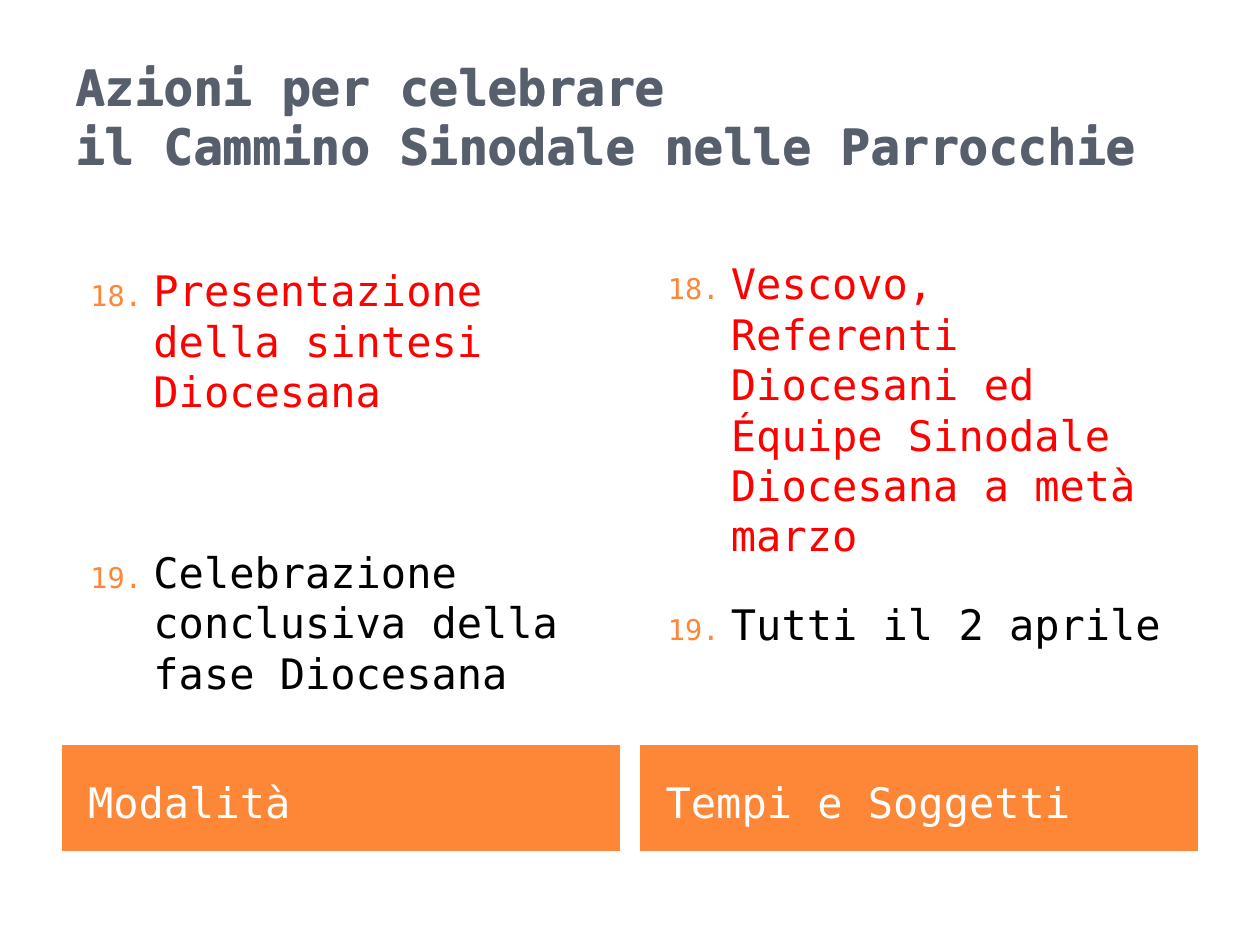
"""Build the slide on celebrating the synodal path in the parishes."""
from lxml import etree
from pptx import Presentation
from pptx.dml.color import RGBColor
from pptx.enum.shapes import MSO_SHAPE
from pptx.enum.text import MSO_ANCHOR, PP_ALIGN
from pptx.oxml.ns import qn
from pptx.util import Pt

RECTANGLE = MSO_SHAPE.RECTANGLE
TOP, MIDDLE = MSO_ANCHOR.TOP, MSO_ANCHOR.MIDDLE
LEFT = PP_ALIGN.LEFT
SLATE = RGBColor(0x57, 0x5F, 0x6D)
ORANGE = RGBColor(0xFE, 0x86, 0x37)
WHITE = RGBColor(0xFF, 0xFF, 0xFF)
RED = RGBColor(0xFF, 0x00, 0x00)
BLACK = RGBColor(0x00, 0x00, 0x00)
FONT = "DejaVu Sans Mono"
COLUMN_WIDTH = 318
FIRST_NUMBER = 18

TITLE = "Azioni per celebrare \vil Cammino Sinodale nelle Parrocchie"
TITLE_CORNERS = [(36, 21.6), (36.5, 21)]
COLUMNS = [
    {"left": 36, "heading": "Modalità", "inset": 37.6, "gap": 74.6,
     "items": ["Presentazione della sintesi Diocesana",
               "Celebrazione conclusiva della fase Diocesana"]},
    {"left": 366, "heading": "Tempi e Soggetti", "inset": 33.6, "gap": 21.6,
     "items": ["Vescovo, Referenti Diocesani ed Équipe Sinodale Diocesana a metà marzo",
               "Tutti il 2 aprile"]},
]


def write(para, text, size, color, bold=False):
    para.alignment = LEFT
    para.text = text
    for span in para.runs:
        for name, value in {"name": FONT, "size": Pt(size), "bold": bold}.items():
            setattr(span.font, name, value)
        span.font.color.rgb = color


def number(para):
    properties = para._p.get_or_add_pPr()
    properties.set("marL", str(Pt(44.64)))
    properties.set("indent", str(Pt(-36)))
    bullet_color = etree.SubElement(properties, qn("a:buClr"))
    etree.SubElement(bullet_color, qn("a:srgbClr"), val=str(ORANGE))
    etree.SubElement(properties, qn("a:buSzPct"), val="68000")
    etree.SubElement(properties, qn("a:buAutoNum"), type="arabicPeriod", startAt=str(FIRST_NUMBER))


deck = Presentation()
deck.slide_width, deck.slide_height = Pt(720), Pt(540)
slide = deck.slides.add_slide(deck.slide_layouts[6])

for column in COLUMNS:
    heading = slide.shapes.add_shape(
        RECTANGLE, Pt(column["left"]), Pt(426), Pt(COLUMN_WIDTH), Pt(60))
    heading.shadow.inherit = False
    heading.fill.solid()
    heading.fill.fore_color.rgb = ORANGE
    heading.line.color.rgb = ORANGE
    heading.line.width = Pt(0.75)
    frame_format = {"word_wrap": True, "vertical_anchor": MIDDLE,
                    "margin_left": Pt(14.4), "margin_top": Pt(7.6)}
    for name, value in frame_format.items():
        setattr(heading.text_frame, name, value)
    write(heading.text_frame.paragraphs[0], column["heading"], 24, WHITE)

    body = slide.shapes.add_textbox(
        Pt(column["left"]), Pt(113.75), Pt(COLUMN_WIDTH), Pt(310))
    frame_format = {"word_wrap": True, "vertical_anchor": TOP,
                    "margin_top": Pt(column["inset"])}
    for name, value in frame_format.items():
        setattr(body.text_frame, name, value)
    for index, (item, color) in enumerate(zip(column["items"], (RED, BLACK))):
        para = body.text_frame.add_paragraph() if index else body.text_frame.paragraphs[0]
        number(para)
        if index:
            para.space_before = Pt(column["gap"])
        write(para, item, 24, color)

for left, top in TITLE_CORNERS:
    title = slide.shapes.add_textbox(Pt(left), Pt(top), Pt(648), Pt(90))
    title.text_frame.word_wrap = True
    title.text_frame.vertical_anchor = MIDDLE
    write(title.text_frame.paragraphs[0], TITLE, 28, SLATE, bold=True)

deck.save("out.pptx")
